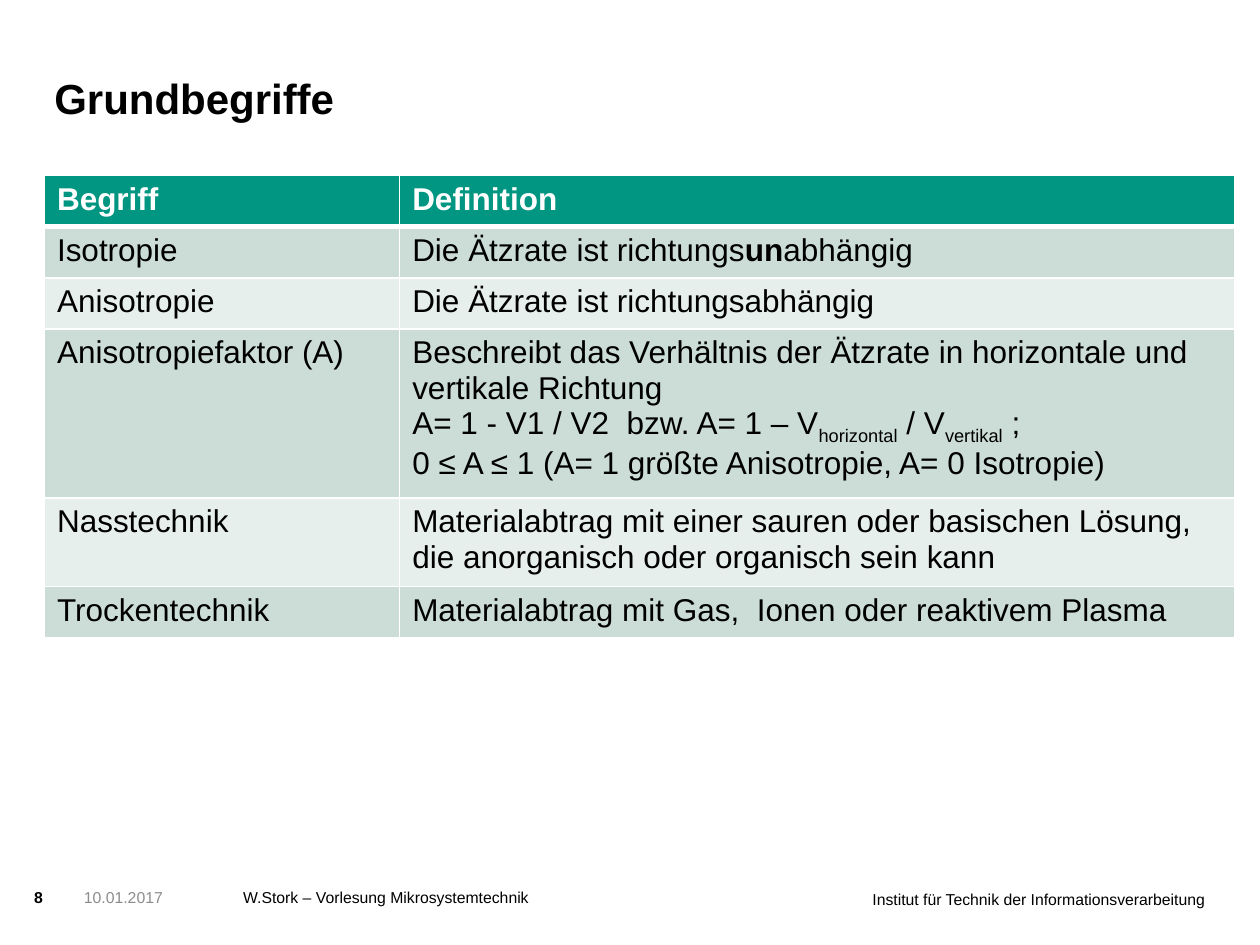
"""Build the slide on basic terms of etching."""
from lxml import etree
from pptx import Presentation
from pptx.dml.color import RGBColor
from pptx.enum.text import MSO_ANCHOR, PP_ALIGN
from pptx.oxml.ns import qn
from pptx.util import Pt

LEFT, RIGHT = PP_ALIGN.LEFT, PP_ALIGN.RIGHT
TOP, BOTTOM = MSO_ANCHOR.TOP, MSO_ANCHOR.BOTTOM
BLANK = 6
FONT = "Arial"
COLORS = {
    "black": "000000",
    "white": "FFFFFF",
    "gray": "8C8C8C",
    "head": "009682",
    "dark": "CCDDD8",
    "light": "E7EFED",
}
WIDTHS = (203, 477.4)
HEIGHT = 29.2
ROWS = [
    ("Begriff", [["Definition"]]),
    ("Isotropie", [["Die Ätzrate ist richtungs", ("un", "bold"), "abhängig"]]),
    ("Anisotropie", [["Die Ätzrate ist richtungsabhängig"]]),
    ("Anisotropiefaktor (A)", [
        ["Beschreibt das Verhältnis der Ätzrate in horizontale und vertikale Richtung"],
        ["A= 1 - V1 / V2  bzw. A= 1 – V", ("horizontal", "sub"), " / V",
         ("vertikal", "sub"), " ; ", "\n",
         "0 ≤ A ≤ 1 (A= 1 größte Anisotropie, A= 0 Isotropie)"],
    ]),
    ("Nasstechnik", [["Materialabtrag mit einer sauren oder basischen Lösung, "
                      "die anorganisch oder organisch sein kann"]]),
    ("Trockentechnik", [["Materialabtrag mit Gas,  Ionen oder reaktivem Plasma"]]),
]


def rgb(name):
    return RGBColor.from_string(COLORS[name])


def set_font(para, size, color, bold=False):
    font = para.font
    font.name, font.size, font.bold = FONT, Pt(size), bold
    font.color.rgb = rgb(color)


def add_text(slide, box, text, size=9, color="black", bold=False, align=LEFT, anchor=TOP):
    frame = slide.shapes.add_textbox(*map(Pt, box)).text_frame
    frame.word_wrap = True
    frame.vertical_anchor = anchor
    frame.margin_left = frame.margin_right = 0
    frame.margin_top = frame.margin_bottom = 0
    para = frame.paragraphs[0]
    para.text = text
    para.alignment = align
    set_font(para, size, color, bold)


def add_part(para, part):
    if part == "\n":
        para.add_line_break()
        return
    text, style = (part, None) if isinstance(part, str) else part
    run = para.add_run()
    run.text = text
    if style == "bold":
        run.font.bold = True
    elif style == "sub":
        run._r.get_or_add_rPr().set("baseline", "-25000")


def add_edge(cell, side, width):
    props = cell._tc.get_or_add_tcPr()
    line = etree.SubElement(props, qn(f"a:ln{side}"), w=str(Pt(width)))
    fill = etree.SubElement(line, qn("a:solidFill"))
    etree.SubElement(fill, qn("a:srgbClr"), val=COLORS["white"])


def fill_cell(cell, paras, row):
    head = row == 0
    for side in "LRTB":
        thick = (head and side == "B") or (row == 1 and side == "T")
        add_edge(cell, side, 3 if thick else 1)
    cell.fill.solid()
    cell.fill.fore_color.rgb = rgb("head" if head else "dark" if row % 2 else "light")
    frame = cell.text_frame
    for i, parts in enumerate(paras):
        para = frame.add_paragraph() if i else frame.paragraphs[0]
        set_font(para, 18, "white" if head else "black", head)
        for part in parts:
            add_part(para, part)


def add_terms(slide):
    box = (25.4, 100.4, sum(WIDTHS), HEIGHT * len(ROWS))
    table = slide.shapes.add_table(len(ROWS), len(WIDTHS), *map(Pt, box)).table
    for col, width in zip(table.columns, WIDTHS):
        col.width = Pt(width)
    for i, (term, paras) in enumerate(ROWS):
        table.rows[i].height = Pt(HEIGHT)
        fill_cell(table.cell(i, 0), [[term]], i)
        fill_cell(table.cell(i, 1), paras, i)


def main():
    deck = Presentation()
    deck.slide_width, deck.slide_height = Pt(720), Pt(540)
    slide = deck.slides.add_slide(deck.slide_layouts[BLANK])
    add_text(slide, (473, 508.5, 215.5, 28), "Institut für Technik der Informationsverarbeitung",
             align=RIGHT)
    add_text(slide, (19.5, 507.5, 26, 17), "8", bold=True)
    add_text(slide, (139, 507.5, 215.5, 28), "W.Stork – Vorlesung Mikrosystemtechnik")
    add_text(slide, (31, 26, 544.5, 44), "Grundbegriffe", 24, bold=True, anchor=BOTTOM)
    add_text(slide, (48, 507.5, 82, 28), "10.01.2017", color="gray")
    add_terms(slide)
    deck.save("out.pptx")


if __name__ == "__main__":
    main()
